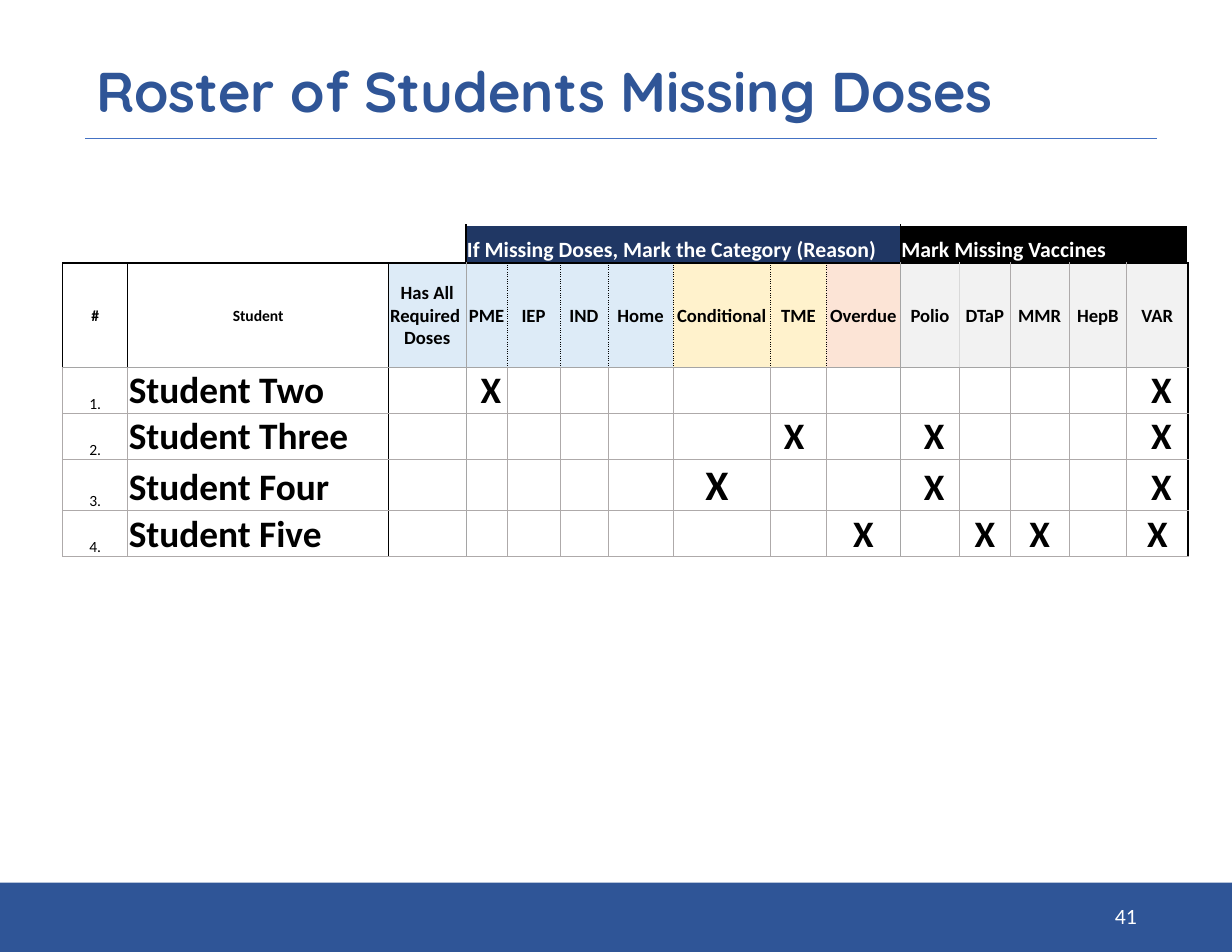
"""Builds the roster slide of students missing doses."""
from lxml import etree
from pptx import Presentation
from pptx.dml.color import RGBColor
from pptx.enum.shapes import MSO_CONNECTOR, MSO_SHAPE
from pptx.enum.text import MSO_ANCHOR as ANCHOR, PP_ALIGN as ALIGN
from pptx.oxml import parse_xml
from pptx.oxml.ns import nsdecls, qn
from pptx.util import Inches, Pt

COLORS = {
    "blue": "2F5597", "rule": "4472C4", "navy": "203764", "black": "000000",
    "white": "FFFFFF", "sky": "DDEBF7", "cream": "FFF2CC", "peach": "FCE4D6",
    "pale": "F2F2F2", "grey": "AEAAAA", "mid": "A5A5A5", "light": "D9D9D9",
}
NBSP = chr(160)


def rgb(name):
    return RGBColor.from_string(COLORS[name])


def write(tf, text, size=12, color="black", bold=True, font="Calibri",
          align=ALIGN.CENTER, anchor=ANCHOR.MIDDLE, spacing=None):
    tf.word_wrap = True
    tf.vertical_anchor = anchor
    p = tf.paragraphs[0]
    p.alignment = align
    p.line_spacing = spacing
    r = p.add_run()
    r.text = text
    r.font.size = Pt(size)
    r.font.bold = bold
    r.font.name = font
    r.font.color.rgb = rgb(color)


prs = Presentation()
prs.slide_width, prs.slide_height = Inches(11), Inches(8.5)
s = prs.slides.add_slide(prs.slide_layouts[6])

rule = s.shapes.add_connector(MSO_CONNECTOR.STRAIGHT, Inches(0.76), Inches(1.24),
                              Inches(10.33), Inches(1.24))
rule.line.color.rgb = rgb("rule")
rule.line.width = Pt(0.75)
etree.SubElement(rule._element.spPr, qn("a:effectLst"))

footer = s.shapes.add_shape(MSO_SHAPE.RECTANGLE, 0, Inches(7.88), Inches(11), Inches(0.62))
footer.shadow.inherit = False
footer.fill.solid()
footer.fill.fore_color.rgb = rgb("blue")
footer.line.fill.background()

title = s.shapes.add_textbox(Inches(0.76), Inches(0.45), Inches(9.49), Inches(0.79))
write(title.text_frame, "Roster of Students Missing Doses", size=36, color="blue",
      font="Quicksand", align=ALIGN.LEFT, spacing=0.9)

widths = [0.58, 2.33, 0.69, 0.37, 0.47, 0.43, 0.58, 0.87,
          0.5, 0.66, 0.53, 0.45, 0.53, 0.51, 0.55]
heights = [0.34, 0.93] + [0.39] * 4
groups = [
    (0, 2, None, None),
    (3, 9, "If Missing Doses, Mark the Category (Reason)", "navy"),
    (10, 14, "Mark Missing Vaccines", "black"),
]
headers = ["#", "Student", f"Has All Required{NBSP} Doses", "PME", "IEP", "IND", "Home",
           "Conditional", "TME", "Overdue", "Polio", "DTaP", "MMR", "HepB", "VAR"]
header_fills = ([None] * 2 + ["sky"] * 5 + ["cream"] * 2 + ["peach"] + ["pale"] * 5)
before, after = NBSP + "X", "X" + NBSP
students = [
    ("Student Two" + NBSP, {"PME": before, "VAR": before}),
    ("Student Three" + NBSP, {"TME": after, "Polio": before, "VAR": before}),
    ("Student Four", {"Conditional": after, "Polio": before, "VAR": before}),
    ("Student Five", {"Overdue": "X", "DTaP": "X", "MMR": "X", "VAR": "X"}),
]

solid, thin, dotted = ("black", 1, "solid"), ("black", 0.5, "solid"), ("black", 0.5, "sysDot")
grey, mid, light = [(name, 0.5, "solid") for name in ("grey", "mid", "light")]
group_edges = [solid if c in (3, 10, 15) else None for c in range(16)]
header_edges = [solid, thin, solid, mid] + [dotted] * 6 + [mid, light] + [grey] * 3 + [solid]
body_edges = [{2: solid, 3: mid, 10: mid, 15: solid}.get(c, grey) for c in range(16)]
vertical = [group_edges, header_edges] + [body_edges] * 4
horizontal = [None, solid, mid] + [grey] * 4

frame = s.shapes.add_table(len(heights), len(widths), Inches(0.56), Inches(2.01),
                           Inches(sum(widths)), Inches(sum(heights)))
table = frame.table
table.first_row = table.horz_banding = False
for column, width in zip(table.columns, widths):
    column.width = Inches(width)
for row, height in zip(table.rows, heights):
    row.height = Inches(height)

for i in range(len(heights)):
    for j in range(len(widths)):
        cell = table.cell(i, j)
        cell.margin_left = cell.margin_right = cell.margin_top = Inches(0.01)
        cell.margin_bottom = 0
        edges = zip("LRTB", (vertical[i][j], vertical[i][j + 1],
                             horizontal[i], horizontal[i + 1]))
        for side, edge in edges:
            if edge:
                color, width, dash = edge
                cell._tc.get_or_add_tcPr().append(parse_xml(
                    f'<a:ln{side} {nsdecls("a")} w="{Pt(width)}"><a:solidFill>'
                    f'<a:srgbClr val="{COLORS[color]}"/></a:solidFill>'
                    f'<a:prstDash val="{dash}"/></a:ln{side}>'))
        cell.fill.background()

for first, last, text, fill in groups:
    cell = table.cell(0, first)
    cell.merge(table.cell(0, last))
    if text:
        cell.fill.solid()
        cell.fill.fore_color.rgb = rgb(fill)
        write(cell.text_frame, text, size=14, color="white", align=ALIGN.LEFT)
        cell.vertical_anchor = ANCHOR.BOTTOM

for j, (text, fill) in enumerate(zip(headers, header_fills)):
    cell = table.cell(1, j)
    if fill:
        cell.fill.solid()
        cell.fill.fore_color.rgb = rgb(fill)
    write(cell.text_frame, text, size=12 if fill else 10)
    cell.vertical_anchor = ANCHOR.MIDDLE

for i, (student, marks) in enumerate(students, 1):
    number, name = table.cell(i + 1, 0), table.cell(i + 1, 1)
    write(number.text_frame, f"{i}.", size=10, bold=False)
    write(name.text_frame, student, size=24, align=ALIGN.LEFT)
    number.vertical_anchor = name.vertical_anchor = ANCHOR.BOTTOM
    for header, mark in marks.items():
        cell = table.cell(i + 1, headers.index(header))
        write(cell.text_frame, mark, size=27 if header == "Conditional" else 24)
        cell.vertical_anchor = ANCHOR.BOTTOM

page = s.shapes.add_textbox(Inches(7.77), Inches(7.95), Inches(2.48), Inches(0.45))
write(page.text_frame, "41", size=14, color="white", bold=False, align=ALIGN.RIGHT)

prs.save("out.pptx")
